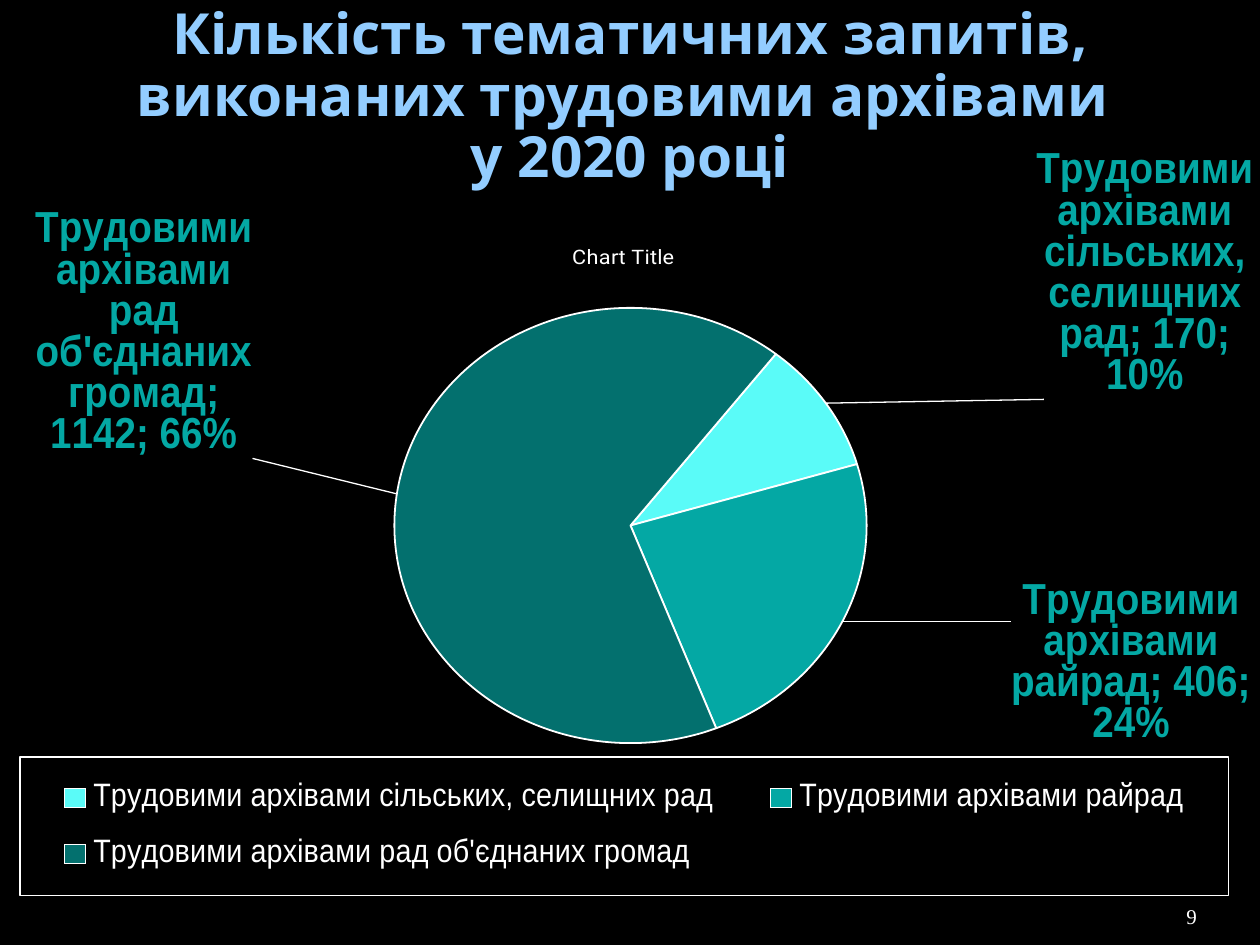
from dataclasses import dataclass

import lxml.etree
import pptx
import pptx.chart.data
import pptx.dml.color
import pptx.enum.chart
import pptx.enum.text
import pptx.oxml
import pptx.oxml.ns
import pptx.util
from pptx.util import Inches

Align = pptx.enum.text.PP_ALIGN
Anchor = pptx.enum.text.MSO_ANCHOR
qn = pptx.oxml.ns.qn


@dataclass(frozen=True)
class Face:
    name: str
    size: float
    color: str
    bold: bool = False


@dataclass(frozen=True)
class Theme:
    back: str = "000000"
    line: str = "FFFFFF"
    title: Face = Face("Noto Sans", 32.4, "93CDFF", True)
    base: Face = Face("Roboto", 12.4, "FFFFFF")
    label: Face = Face("Arial Narrow", 26.9, "04A8A4", True)
    legend: Face = Face("Arial Narrow", 20, "FFFFFF")
    number: Face = Face("Times New Roman", 12, "FFFFFF")


@dataclass(frozen=True)
class Slice:
    name: str
    count: int
    color: str
    shift: tuple[float, float]  # label offset, as a share of the chart


THEME = Theme()
SLICES = [
    Slice("Трудовими архівами сільських, селищних рад", 170, "5AFBF8", (0.17, 0)),
    Slice("Трудовими архівами райрад", 406, "04A8A4", (0.13, -0.06)),
    Slice("Трудовими архівами рад об'єднаних громад", 1142, "03706E", (-0.11, -0.05)),
]


def rgb(code: str) -> pptx.dml.color.RGBColor:
    return pptx.dml.color.RGBColor.from_string(code)


def style(font, face: Face) -> None:
    font.name, font.size, font.bold = face.name, pptx.util.Pt(face.size), face.bold
    font.color.rgb = rgb(face.color)


def layout(x: float, y: float, size: tuple = (), inner: bool = False, edge: bool = True):
    """Make a manual chart layout; without edge, x and y are offsets."""
    root = pptx.oxml.parse_xml(
        f'<c:layout {pptx.oxml.ns.nsdecls("c")}><c:manualLayout/></c:layout>')
    parts = [("layoutTarget", "inner")] if inner else []
    if edge:
        parts += [("xMode", "edge"), ("yMode", "edge")]
    parts += [("x", x), ("y", y), *zip("wh", size)]
    for name, val in parts:
        lxml.etree.SubElement(root[0], qn(f"c:{name}")).set("val", str(val))
    return root


def place(node, new, after: str = "") -> None:
    """Replace the layout of a chart part, or put one in its proper spot."""
    for old in node.findall(qn("c:layout")):
        node.remove(old)
    if after:
        node.find(qn(f"c:{after}")).addnext(new)
    else:
        node.insert(0, new)


def outline():
    """Make the thin line shared by the legend frame and the leader lines."""
    return pptx.oxml.parse_xml(
        f'<c:spPr {pptx.oxml.ns.nsdecls("c", "a")}><a:ln w="9525"><a:solidFill>'
        f'<a:srgbClr val="{THEME.line}"/></a:solidFill></a:ln></c:spPr>')


def write(slide, box: tuple, lines: list[str], face: Face, align, anchor, pad: float = 0.1):
    frame = slide.shapes.add_textbox(*map(Inches, box)).text_frame
    frame.word_wrap = True
    frame.vertical_anchor = anchor
    frame.margin_left = frame.margin_right = Inches(pad)
    para = frame.paragraphs[0]
    para.alignment = align
    for i, line in enumerate(lines):
        if i:
            para.add_line_break()
        run = para.add_run()
        run.text = line
        style(run.font, face)
    return para


def draw_slice(series, i: int, item: Slice) -> None:
    """Colour one slice and label it with its name, count and share."""
    point = series.points[i]
    fmt = point.format
    fmt.fill.solid()
    fmt.fill.fore_color.rgb = rgb(item.color)
    fmt.line.color.rgb = rgb(THEME.line)
    fmt.line.width = pptx.util.Pt(1.03)
    label = point.data_label
    style(label.font, THEME.label)
    label.position = pptx.enum.chart.XL_LABEL_POSITION.OUTSIDE_END
    node = series._element.find(qn("c:dLbls")).findall(qn("c:dLbl"))[i]
    for name in ("showVal", "showCatName", "showPercent"):
        node.find(qn(f"c:{name}")).set("val", "1")
    lxml.etree.SubElement(node, qn("c:separator")).text = "; "
    place(node, layout(*item.shift, edge=False), "idx")


def draw_legend(chart) -> None:
    chart.has_legend = True
    legend = chart.legend
    legend.position = pptx.enum.chart.XL_LEGEND_POSITION.RIGHT
    legend.include_in_layout = False
    style(legend.font, THEME.legend)
    node = legend._element
    place(node, layout(0.01, 0.79, (0.97, 0.2)), "legendPos")
    node.find(qn("c:txPr")).addprevious(outline())


def draw_pie(slide) -> None:
    data = pptx.chart.data.CategoryChartData()
    data.categories = [item.name for item in SLICES]
    data.add_series("Series 1", [item.count for item in SLICES])
    box = map(Inches, (0.06, 1.21, 9.89, 5.95))
    chart = slide.shapes.add_chart(pptx.enum.chart.XL_CHART_TYPE.PIE, *box, data).chart
    style(chart.font, THEME.base)

    chart.has_title = True
    run = chart.chart_title.text_frame.paragraphs[0].add_run()
    run.text = "Chart Title"
    style(run.font, THEME.base)
    place(chart.chart_title._element, layout(0.45, 0.04), "tx")
    draw_legend(chart)

    plot = chart.plots[0]
    plot.vary_by_categories = True
    area = chart._chartSpace.chart.plotArea
    place(area, layout(0.31, 0.14, (0.38, 0.63), inner=True))
    turn = plot._element.find(qn("c:firstSliceAng"))
    if turn is None:
        turn = lxml.etree.SubElement(plot._element, qn("c:firstSliceAng"))
    turn.set("val", "38")

    series = plot.series[0]
    for i, item in enumerate(SLICES):
        draw_slice(series, i, item)
    labels = series._element.find(qn("c:dLbls"))
    lxml.etree.SubElement(labels, qn("c:leaderLines")).append(outline())


def main() -> None:
    deck = pptx.Presentation()
    deck.slide_width, deck.slide_height = Inches(10), Inches(7.5)
    slide = deck.slides.add_slide(deck.slide_layouts[6])
    slide.background.fill.solid()
    slide.background.fill.fore_color.rgb = rgb(THEME.back)
    title = ["Кількість тематичних запитів, виконаних трудовими архівами ", "у 2020 році"]
    para = write(slide, (0.5, 0, 9, 1.55), title, THEME.title, Align.CENTER, Anchor.MIDDLE)
    para.line_spacing = 0.9
    draw_pie(slide)
    write(slide, (8.67, 7.02, 0.83, 0.4), ["9"], THEME.number, Align.RIGHT, Anchor.BOTTOM, 0)
    deck.save("out.pptx")


if __name__ == "__main__":
    main()
